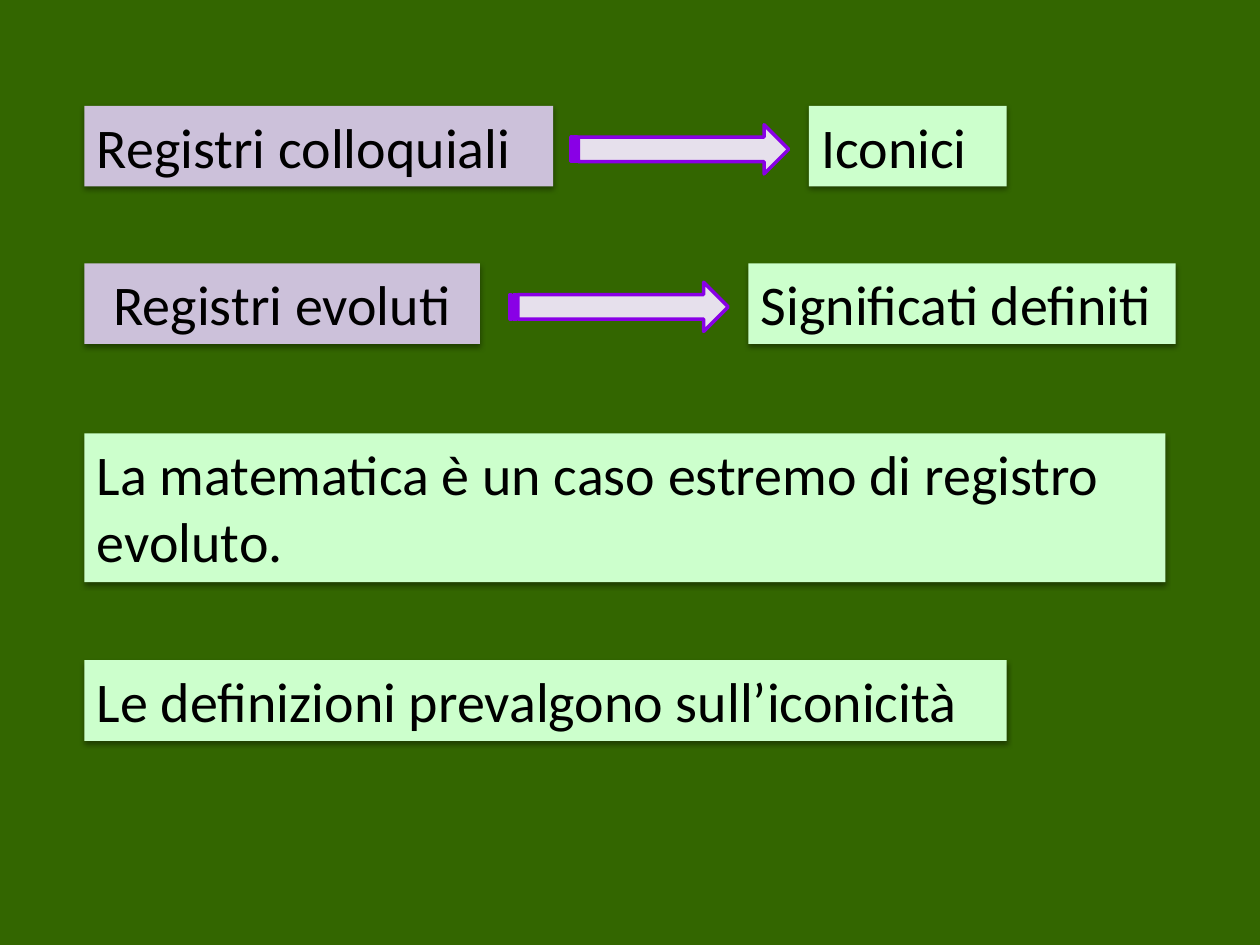
from lxml.etree import SubElement
from pptx import Presentation
from pptx.dml.color import RGBColor
from pptx.enum.shapes import MSO_SHAPE
from pptx.enum.text import MSO_ANCHOR, MSO_AUTO_SIZE, PP_ALIGN
from pptx.oxml.ns import qn
from pptx.util import Inches, Pt

# Content: label, fill, left, top, width, lines, alignment
LEFT, ROW1, ROW2 = 0.67, 0.84, 2.09
BOXES = [
    ("Registri colloquiali", "lilac", LEFT, ROW1, 3.72, 1, PP_ALIGN.JUSTIFY),
    ("Iconici", "mint", 6.42, ROW1, 1.57, 1, PP_ALIGN.JUSTIFY),
    ("Registri evoluti", "lilac", LEFT, ROW2, 3.14, 1, PP_ALIGN.CENTER),
    ("Significati definiti", "mint", 5.94, ROW2, 3.39, 1, PP_ALIGN.JUSTIFY),
    ("La matematica è un caso estremo di registro evoluto.",
     "mint", LEFT, 3.44, 8.58, 2, PP_ALIGN.LEFT),
    ("Le definizioni prevalgono sull’iconicità",
     "mint", LEFT, 5.24, 7.32, 1, PP_ALIGN.LEFT),
]
# Each arrow stops just before the box on its right: box left, row top
ARROWS = [(6.42, ROW1), (5.94, ROW2)]

THEME = {
    "back": "336600", "mint": "CCFFCC", "lilac": "CCC1DA", "ink": "000000",
    "arrow": "E6E0EC", "edge": "8900E6", "font": "Calibri", "size": 32,
}
LINE, PAD = 0.54, 0.1
ARROW_W, ARROW_H, GAP, DROP = 1.73, 0.39, 0.16, 0.15


def color(name):
    return RGBColor.from_string(THEME[name])


def add_shape(kind, fill, *place):
    shape = slide.shapes.add_shape(kind, *map(Inches, place))
    shape.shadow.inherit = False
    shape.fill.solid()
    shape.fill.fore_color.rgb = color(fill)
    return shape


def add_shadow(shape):
    effects = shape._element.spPr.find(qn("a:effectLst"))
    shadow = SubElement(effects, qn("a:outerShdw"), blurRad=str(Pt(3.15)),
                        dist=str(Pt(1.57)), dir="5400000", rotWithShape="0")
    tint = SubElement(shadow, qn("a:srgbClr"), val=THEME["ink"])
    SubElement(tint, qn("a:alpha"), val="38000")


def add_box(text, fill, left, top, width, lines, align):
    box = add_shape(MSO_SHAPE.RECTANGLE, fill,
                    left, top, width, PAD + LINE * lines)
    box.line.fill.background()
    add_shadow(box)
    frame = box.text_frame
    format = {"word_wrap": True, "vertical_anchor": MSO_ANCHOR.TOP,
              "auto_size": MSO_AUTO_SIZE.SHAPE_TO_FIT_TEXT}
    for key, value in format.items():
        setattr(frame, key, value)
    para = frame.paragraphs[0]
    para.alignment = align
    run = para.add_run()
    run.text = text
    for key, value in {"name": THEME["font"], "size": Pt(THEME["size"])}.items():
        setattr(run.font, key, value)
    run.font.color.rgb = color("ink")


def add_arrow(right, top):
    arrow = add_shape(MSO_SHAPE.STRIPED_RIGHT_ARROW, "arrow",
                      right - GAP - ARROW_W, top + DROP, ARROW_W, ARROW_H)
    arrow.line.color.rgb = color("edge")
    arrow.line.width = Pt(2)


# Slide and background
deck = Presentation()
deck.slide_width, deck.slide_height = Inches(10), Inches(7.5)
slide = deck.slides.add_slide(deck.slide_layouts[6])
slide.background.fill.solid()
slide.background.fill.fore_color.rgb = color("back")

# Labels, then the arrows between them
for box in BOXES:
    add_box(*box)
for arrow in ARROWS:
    add_arrow(*arrow)

deck.save("out.pptx")
